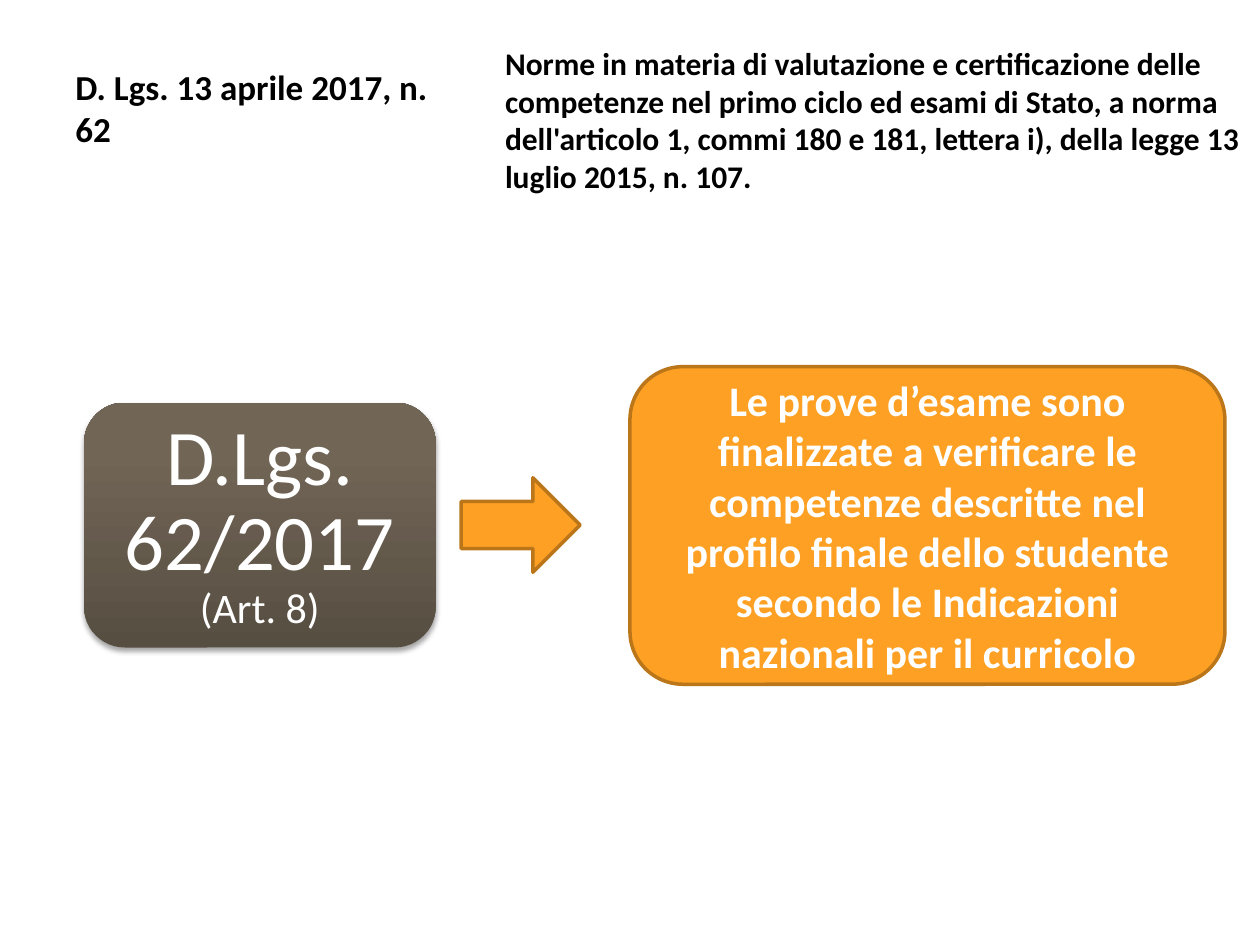
"""Build a slide on the exam rules of D.Lgs. 62/2017."""
import dataclasses
from typing import Optional

import lxml.etree
import pptx
import pptx.dml.color
import pptx.enum.shapes
import pptx.enum.text
import pptx.oxml.ns
import pptx.util

Pt = pptx.util.Pt
Shape = pptx.enum.shapes.MSO_SHAPE
Anchor = pptx.enum.text.MSO_ANCHOR
Align = pptx.enum.text.PP_ALIGN
qn = pptx.oxml.ns.qn

BLACK, WHITE = "000000", "FFFFFF"
ORANGE, ORANGE_EDGE = "FDA023", "BB761A"
BROWN_STOPS = ((0, "574E42"), (80, "716556"), (100, "726656"))


@dataclasses.dataclass(frozen=True)
class Box:
    left: float
    top: float
    width: float
    height: float

    def lengths(self) -> tuple:
        return tuple(Pt(v) for v in (self.left, self.top, self.width, self.height))


@dataclasses.dataclass(frozen=True)
class Para:
    text: str
    size: float
    color: str = WHITE
    bold: bool = False
    align: Align = Align.CENTER
    spacing: Optional[float] = None
    before: float = 0
    after: float = 0


def rgb(value: str) -> pptx.dml.color.RGBColor:
    return pptx.dml.color.RGBColor.from_string(value)


def write(sp, paras: list[Para], anchor: Anchor, inset: Optional[float] = None) -> None:
    tf = sp.text_frame
    tf.word_wrap = True
    tf.vertical_anchor = anchor
    if inset is not None:
        tf.margin_left = tf.margin_top = tf.margin_right = tf.margin_bottom = Pt(inset)
    for i, para in enumerate(paras):
        p = tf.add_paragraph() if i else tf.paragraphs[0]
        p.text = para.text
        p.alignment = para.align
        p.space_before, p.space_after = Pt(para.before), Pt(para.after)
        if para.spacing:
            p.line_spacing = para.spacing
        p.font.name, p.font.size, p.font.bold = "Calibri", Pt(para.size), para.bold
        p.font.color.rgb = rgb(para.color)


def add_text(s, box: Box, paras: list[Para], anchor: Anchor, inset: Optional[float] = None) -> None:
    write(s.shapes.add_textbox(*box.lengths()), paras, anchor, inset)


def add_orange(s, kind: Shape, box: Box):
    sp = s.shapes.add_shape(kind, *box.lengths())
    sp.shadow.inherit = False
    sp.fill.solid()
    sp.fill.fore_color.rgb = rgb(ORANGE)
    sp.line.color.rgb = rgb(ORANGE_EDGE)
    sp.line.width = Pt(2)
    return sp


def add_color(parent, value: str):
    return lxml.etree.SubElement(parent, qn("a:srgbClr"), val=value)


def add_brown_card(s, box: Box) -> None:
    sp = s.shapes.add_shape(Shape.ROUNDED_RECTANGLE, *box.lengths())
    sp.line.fill.background()
    sp.fill.gradient()
    sp.fill.gradient_angle = 90
    stops = sp.element.spPr.find(".//" + qn("a:gsLst"))
    for stop in list(stops):
        stops.remove(stop)
    for pos, color in BROWN_STOPS:
        add_color(lxml.etree.SubElement(stops, qn("a:gs"), pos=str(pos * 1000)), color)
    sp.shadow.inherit = False
    effects = sp.element.spPr.find(qn("a:effectLst"))
    shadow = lxml.etree.SubElement(
        effects, qn("a:outerShdw"), blurRad=str(Pt(3.1)), dist=str(Pt(1.8)),
        dir="5400000", rotWithShape="0")
    lxml.etree.SubElement(add_color(shadow, BLACK), qn("a:alpha"), val="35000")


def main() -> None:
    prs = pptx.Presentation()
    prs.slide_width, prs.slide_height = Pt(720), Pt(540)
    s = prs.slides.add_slide(prs.slide_layouts[6])

    add_text(s, Box(36, 21.5, 237, 91.5), [
        Para("D. Lgs. 13 aprile 2017, n. 62\v", 20, BLACK, True, Align.LEFT)], Anchor.BOTTOM)
    add_text(s, Box(281.5, 21.5, 438.5, 518.5), [
        Para("Norme in materia di valutazione e certificazione delle competenze nel primo "
             "ciclo ed esami di Stato, a norma dell'articolo 1, commi 180 e 181, lettera i), "
             "della legge 13 luglio 2015, n. 107.", 18, BLACK, True, Align.LEFT, before=3.6)],
        Anchor.TOP)

    add_brown_card(s, Box(48, 230, 201, 140))
    add_text(s, Box(54.8, 236.8, 187.4, 126.4), [
        Para("D.Lgs. 62/2017", 45, spacing=0.9),
        Para("(Art. 8)", 24, spacing=0.9, after=8.4)], Anchor.MIDDLE, 13.5)

    rule = add_orange(s, Shape.ROUNDED_RECTANGLE, Box(360, 209.5, 340, 181.5))
    write(rule, [
        Para("Le prove d’esame sono finalizzate a verificare le competenze descritte nel "
             "profilo finale dello studente secondo le Indicazioni nazionali per il curricolo",
             24, bold=True)], Anchor.MIDDLE)
    add_orange(s, Shape.RIGHT_ARROW, Box(263.5, 273, 68, 54))

    prs.save("out.pptx")


if __name__ == "__main__":
    main()
